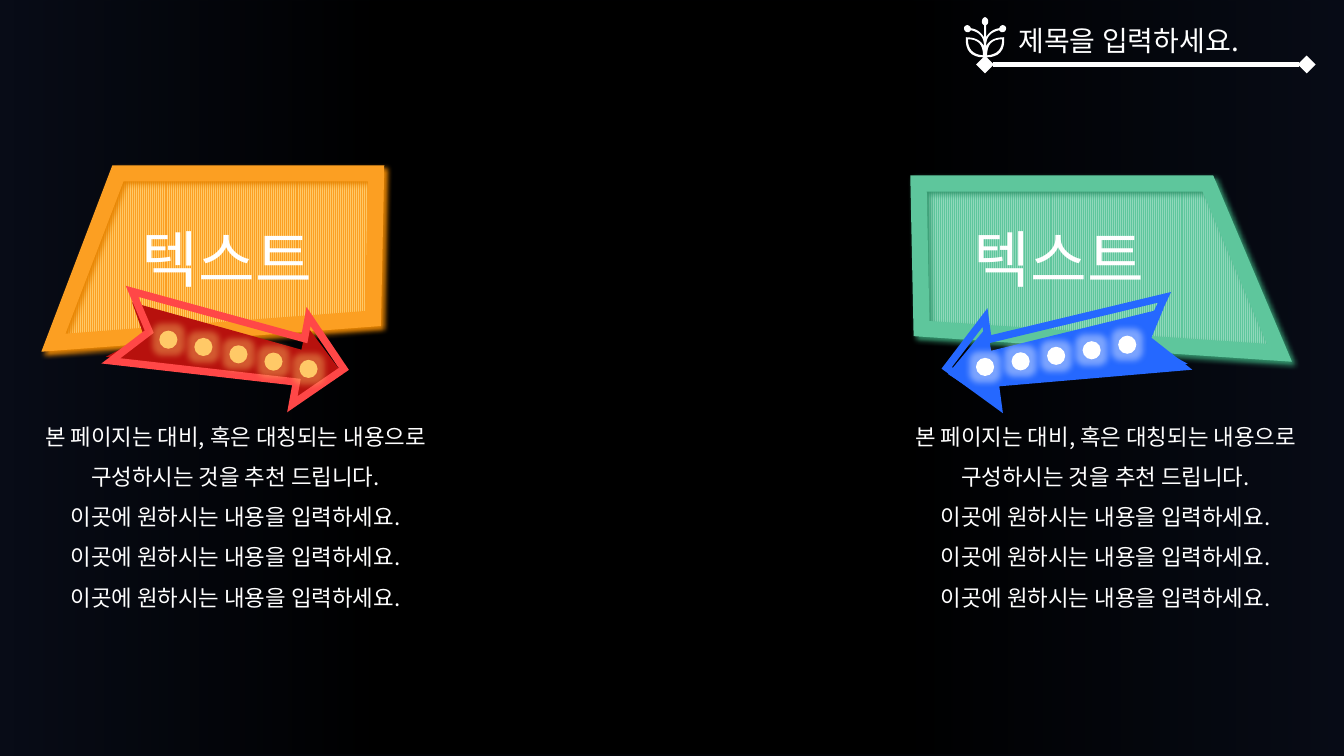
"""Builds a slide that contrasts two glowing signs with arrows."""
from lxml import etree
from pptx import Presentation
from pptx.dml.color import RGBColor
from pptx.enum.dml import MSO_PATTERN
from pptx.enum.shapes import MSO_CONNECTOR, MSO_SHAPE
from pptx.enum.text import MSO_ANCHOR, MSO_AUTO_SIZE, PP_ALIGN
from pptx.oxml.ns import qn
from pptx.util import Inches, Pt

RECTANGLE, OVAL = MSO_SHAPE.RECTANGLE, MSO_SHAPE.OVAL
STRAIGHT = MSO_CONNECTOR.STRAIGHT
STRIPES = MSO_PATTERN.LIGHT_VERTICAL
LEFT, CENTER = PP_ALIGN.LEFT, PP_ALIGN.CENTER
TOP, NO_FIT = MSO_ANCHOR.TOP, MSO_AUTO_SIZE.NONE

FONT = "Noto Sans CJK KR"
BLACK = RGBColor(0x00, 0x00, 0x00)
WHITE = RGBColor(0xFF, 0xFF, 0xFF)
NIGHT = RGBColor(0x51, 0x70, 0xD3)
ORANGE = RGBColor(0xFC, 0x9F, 0x22)
AMBER = RGBColor(0xFF, 0xC9, 0x67)
BURNT = RGBColor(0xE7, 0x85, 0x03)
DARK_RED = RGBColor(0xB7, 0x11, 0x0D)
RED = RGBColor(0xFF, 0x47, 0x47)
GREEN = RGBColor(0x5E, 0xC6, 0x9C)
MINT = RGBColor(0x90, 0xD8, 0xBB)
FOREST = RGBColor(0x35, 0x97, 0x6F)
BLUE = RGBColor(0x25, 0x68, 0xFF)

BODY = ["본 페이지는 대비, 혹은 대칭되는 내용으로 구성하시는 것을 추천 드립니다."] + [
    "이곳에 원하시는 내용을 입력하세요."] * 3

ORANGE_SIGN = {
    "panel": [(1.17, 1.76), (0.53, 3.43), (3.7, 3.2), (3.73, 1.76)],
    "frame": [(1.17, 1.72), (0.53, 3.4), (3.7, 3.16), (3.73, 1.72)],
    "arrow": [(1.31, 3), (2.99, 3.47), (3.04, 3.23), (3.4, 3.71),
              (2.89, 4.03), (2.93, 3.79), (1.05, 3.54), (1.43, 3.34)],
    "outline": [(1.31, 2.89), (3.02, 3.36), (3.06, 3.14), (3.41, 3.66),
                (2.9, 4.01), (2.94, 3.79), (1.1, 3.58), (1.48, 3.29)],
    "bulbs": [(1.58, 3.28), (2.97, 3.57)], "label_left": 1.31,
    "colors": (ORANGE, AMBER, BURNT, DARK_RED, RED, AMBER)}
GREEN_SIGN = {
    "panel": [(12.02, 1.85), (12.74, 3.53), (9.18, 3.29), (9.15, 1.85)],
    "frame": [(11.98, 1.82), (12.69, 3.5), (9.14, 3.26), (9.11, 1.82)],
    "arrow": [(11.54, 3.06), (9.83, 3.48), (9.79, 3.24), (9.4, 3.71),
              (9.91, 4.04), (9.88, 3.8), (11.78, 3.61), (11.4, 3.4)],
    "outline": [(11.55, 2.95), (9.8, 3.37), (9.77, 3.15), (9.39, 3.65),
                (9.9, 4.02), (9.87, 3.8), (11.73, 3.64), (11.36, 3.35)],
    "bulbs": [(9.68, 3.55), (11.09, 3.33)], "label_left": 9.56,
    "colors": (GREEN, MINT, FOREST, BLUE, BLUE, WHITE)}

FLOWER_AXIS = 9.77
FLOWER_HALF = [
    (0, 0.17),
    (0.04, 0.18, 0.04, 0.24, 0.01, 0.25), (0.01, 0.29, 0.01, 0.33, 0.01, 0.37),
    (0.04, 0.32, 0.08, 0.29, 0.14, 0.28), (0.15, 0.26, 0.16, 0.25, 0.18, 0.25),
    (0.23, 0.26, 0.21, 0.33, 0.16, 0.32), (0.16, 0.32, 0.15, 0.31, 0.14, 0.3),
    (0.06, 0.32, 0.01, 0.36, 0.01, 0.46), (0.04, 0.4, 0.1, 0.37, 0.19, 0.37),
    (0.2, 0.5, 0.14, 0.57, 0.01, 0.57), (0.01, 0.59, 0.02, 0.63, 0, 0.63)]
FLOWER_LEAF = [(0.02, 0.55), (0.12, 0.54, 0.17, 0.49, 0.17, 0.39),
               (0.07, 0.39, 0.02, 0.44, 0.02, 0.55)]


def add_node(parent, tag, **attributes):
    """Append a drawing element and return it."""
    values = {name: str(value) for name, value in attributes.items()}
    return etree.SubElement(parent, qn(tag), values)


def add_color(parent, color, alpha=100):
    """Append a colour with its opacity in percent."""
    node = add_node(parent, "a:srgbClr", val=color)
    if alpha < 100:
        add_node(node, "a:alpha", val=alpha * 1000)


def add_effect(shape, tag, color, alpha=100, **attributes):
    """Give a shape a glow or a shadow."""
    effects = shape._element.spPr.find(qn("a:effectLst"))
    add_color(add_node(effects, tag, **attributes), color, alpha)


def paint(shape, fill=None, line=None, width=0):
    """Set a plain fill and a mitred line, with no shadow."""
    shape.shadow.inherit = False
    if fill is None:
        shape.fill.background()
    else:
        shape.fill.solid()
        shape.fill.fore_color.rgb = fill
    if line is None:
        shape.line.fill.background()
    else:
        shape.line.color.rgb = line
        shape.line.width = Pt(width)
        add_node(shape.line._get_or_add_ln(), "a:miter", lim=800000)
    return shape


def add_outline(shapes, *contours):
    """Draw closed contours as one freeform."""
    contours = [[(Inches(x), Inches(y)) for x, y in points] for points in contours]
    builder = shapes.build_freeform(*contours[0][0], scale=1.0)
    for number, points in enumerate(contours):
        if number:
            builder.move_to(*points[0])
        builder.add_line_segments(points[1:], close=True)
    return builder.convert_to_shape()


def trace_curve(start, *curves, steps=8):
    """Return points along a chain of cubic curves."""
    points = [start]
    for ax, ay, bx, by, cx, cy in curves:
        x, y = points[-1]
        for step in range(1, steps + 1):
            t = step / steps
            weights = (1 - t) ** 3, 3 * t * (1 - t) ** 2, 3 * t * t * (1 - t), t ** 3
            points.append((sum(w * v for w, v in zip(weights, (x, ax, bx, cx))),
                           sum(w * v for w, v in zip(weights, (y, ay, by, cy)))))
    return points


def write_text(box, lines, size, align=LEFT, spacing=1.0, wrap=False):
    """Fill a box with unbulleted white paragraphs."""
    frame = box.text_frame
    frame.text = "\n".join(lines)
    frame.word_wrap = wrap
    frame.auto_size = NO_FIT
    frame.vertical_anchor = TOP
    for para in frame.paragraphs:
        para.alignment = align
        para.line_spacing = spacing
        para.space_before = Pt(0)
        properties = para._p.get_or_add_pPr()
        properties.set("marL", "0")
        properties.set("indent", "0")
        add_node(properties, "a:buNone")
        for span in para.runs:
            span.font.size = Pt(size)
            span.font.name = FONT
            span.font.color.rgb = WHITE
            add_node(span._r.get_or_add_rPr(), "a:ea", typeface=FONT)


def place(box, left, top, width, height):
    """Move and size a box."""
    box.left, box.top = Inches(left), Inches(top)
    box.width, box.height = Inches(width), Inches(height)


def add_backdrop(page):
    """Add a blue tint that a black gradient hides in the middle."""
    page.background.fill.solid()
    page.background.fill.fore_color.rgb = BLACK
    tint = page.shapes.add_shape(RECTANGLE, 0, 0, Inches(13.33), Inches(7.5))
    paint(tint, NIGHT)
    add_node(tint._element.spPr.find(qn("a:solidFill"))[0], "a:alpha", val=11000)
    shade = page.shapes.add_shape(RECTANGLE, Inches(0.13), 0, Inches(13.21), Inches(7.5))
    paint(shade, BLACK)
    solid = shade._element.spPr.find(qn("a:solidFill"))
    gradient = etree.Element(qn("a:gradFill"), rotWithShape="1")
    stops = add_node(gradient, "a:gsLst")
    for position, alpha in ((0, 0), (28, 100), (66, 100), (100, 0)):
        add_color(add_node(stops, "a:gs", pos=position * 1000), BLACK, alpha)
    add_node(gradient, "a:lin", ang=0, scaled=0)
    solid.getparent().replace(solid, gradient)


def add_sign(page, sign):
    """Add a striped sign with its lit arrow and label."""
    edge, light, shadow, arrow, outline, bulb_color = sign["colors"]
    shapes = page.shapes.add_group_shape().shapes
    panel = paint(add_outline(shapes, sign["panel"]))
    panel.fill.patterned()
    panel.fill.pattern = STRIPES
    panel.fill.fore_color.rgb, panel.fill.back_color.rgb = edge, light
    frame = paint(add_outline(shapes, sign["frame"]), line=edge, width=11.5)
    add_effect(frame, "a:outerShdw", shadow, blurRad=Pt(4), dist=Pt(3),
               dir=47 * 60000, rotWithShape=0)
    paint(add_outline(shapes, sign["arrow"]), arrow)
    paint(add_outline(shapes, sign["outline"]), line=outline, width=5.25)
    (x, y), (last_x, last_y) = sign["bulbs"]
    for number in range(5):
        bulb = shapes.add_shape(OVAL, Inches(x + (last_x - x) * number / 4),
                                Inches(y + (last_y - y) * number / 4),
                                Inches(0.18), Inches(0.18))
        paint(bulb, bulb_color)
        add_effect(bulb, "a:glow", bulb_color, 40, rad=Pt(9))
    label = shapes.add_textbox(Inches(sign["label_left"]), Inches(2.14),
                               Inches(2.05), Inches(0.84))
    write_text(label, ["텍스트"], 44)


def add_heading(page):
    """Add the title with its flower and diamond-ended rule."""
    title = page.shapes.title
    place(title, 10, 0.18, 2.61, 0.44)
    write_text(title, ["제목을 입력하세요."], 20)
    half, leaf = trace_curve(*FLOWER_HALF), trace_curve(*FLOWER_LEAF)
    contours = [half + [(-x, y) for x, y in reversed(half)], leaf,
                [(-x, y) for x, y in leaf]]
    paint(add_outline(page.shapes, *[[(FLOWER_AXIS + x, y) for x, y in points]
                                     for points in contours]), WHITE)
    rule = page.shapes.add_connector(STRAIGHT, Inches(9.77), Inches(0.64),
                                     Inches(12.96), Inches(0.64))
    rule.line.color.rgb = WHITE
    rule.line.width = Pt(4.25)
    for tag in ("a:headEnd", "a:tailEnd"):
        add_node(rule.line._get_or_add_ln(), tag, type="diamond")
    add_node(rule._element.spPr, "a:effectLst")


def main():
    """Build and save the deck."""
    deck = Presentation()
    deck.slide_width, deck.slide_height = Inches(13.33), Inches(7.5)
    page = deck.slides.add_slide(deck.slide_layouts[3])
    boxes = list(page.placeholders)
    add_backdrop(page)
    for box in boxes:
        page.shapes._spTree.append(box._element)
    for box, left in zip(boxes[1:], (0, 8.63)):
        place(box, left, 4.01, 4.67, 2.52)
        write_text(box, BODY, 16, align=CENTER, spacing=1.5, wrap=True)
    for sign in (ORANGE_SIGN, GREEN_SIGN):
        add_sign(page, sign)
    add_heading(page)
    deck.save("out.pptx")


if __name__ == "__main__":
    main()
